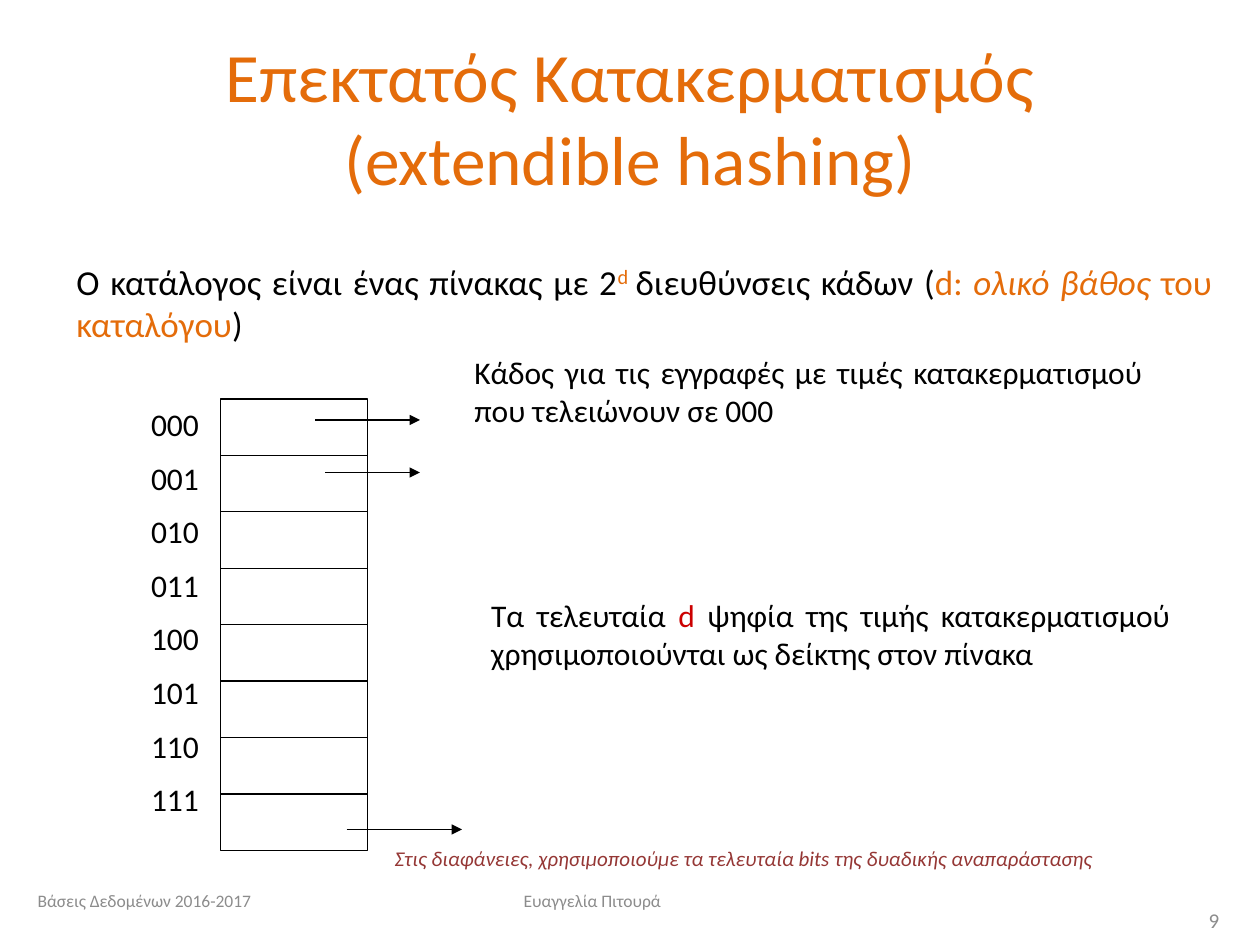
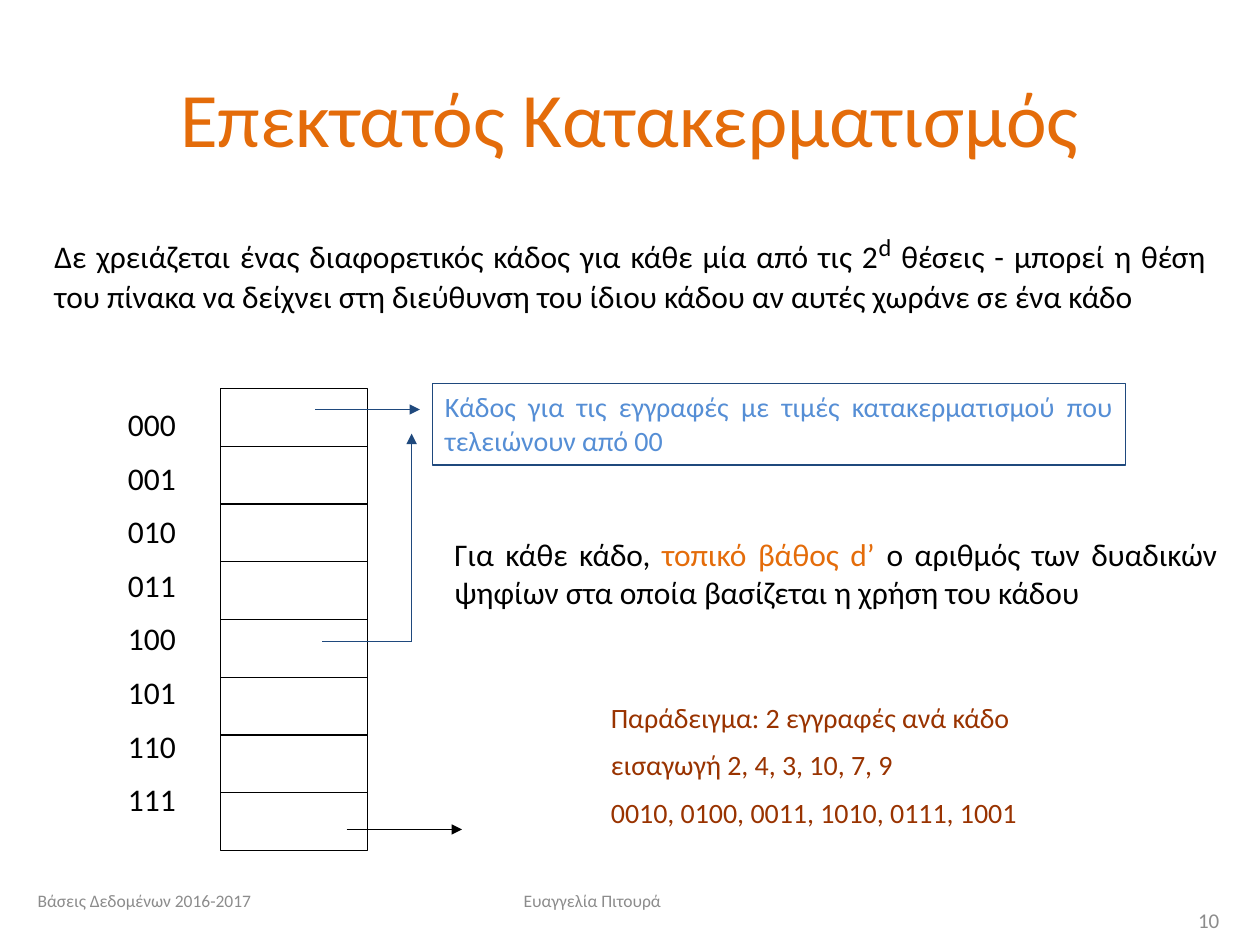
from dataclasses import dataclass
from typing import NamedTuple, Optional

from lxml.etree import SubElement
from pptx import Presentation
from pptx.dml.color import RGBColor
from pptx.enum.shapes import MSO_CONNECTOR, MSO_SHAPE
from pptx.enum.text import MSO_ANCHOR, PP_ALIGN
from pptx.oxml.ns import qn
from pptx.util import Inches, Pt

# Shared look
FONT = "Calibri"
BLACK = RGBColor(0x00, 0x00, 0x00)
WHITE = RGBColor(0xFF, 0xFF, 0xFF)
ORANGE = RGBColor(0xE4, 0x6C, 0x0A)
RED = RGBColor(0xCC, 0x00, 0x00)
MAROON = RGBColor(0x95, 0x37, 0x35)
RUST = RGBColor(0x99, 0x33, 0x00)
NAVY = RGBColor(0x1F, 0x49, 0x7D)
SKY = RGBColor(0x55, 0x8E, 0xD5)
GREY = RGBColor(0x8C, 0x8C, 0x8C)
LINE_WIDTH = Pt(0.75)

# The slide is a grid of 120 columns by 90 rows
SLIDE_WIDTH, SLIDE_HEIGHT = Inches(10), Inches(7.5)
COLUMN, ROW = SLIDE_WIDTH / 120, SLIDE_HEIGHT / 90

DEPTH = 3
ADDRESSES = [f"{address:0{DEPTH}b}" for address in range(2 ** DEPTH)]


class Area(NamedTuple):
    column: float
    row: float
    columns: float
    rows: float

    def emu(self) -> tuple[int, int, int, int]:
        return (round(self.column * COLUMN), round(self.row * ROW),
                round(self.columns * COLUMN), round(self.rows * ROW))


class Point(NamedTuple):
    column: float
    row: float


class Span(NamedTuple):
    text: str
    color: Optional[RGBColor] = None
    italic: bool = False
    raised: bool = False
    size: Optional[float] = None


@dataclass
class Passage:
    area: Area
    paragraphs: list[list[Span]]
    size: float = 18
    color: RGBColor = BLACK
    align: PP_ALIGN = PP_ALIGN.JUSTIFY
    anchor: MSO_ANCHOR = MSO_ANCHOR.TOP
    italic: bool = False
    spaced: bool = True
    border: Optional[RGBColor] = None


@dataclass
class Pointer:
    start: Point
    end: Point
    color: RGBColor = BLACK
    arrow: bool = True


@dataclass
class HashingSlide:
    title: str
    title_size: float
    number: int
    labels_column: float
    directory: Area
    passages: list[Passage]
    pointers: list[Pointer]


FOOTERS = [
    Passage(Area(2.4, 83.4, 28, 4.8), [[Span("Βάσεις Δεδομένων 2016-2017")]], 10, GREY,
            PP_ALIGN.LEFT, MSO_ANCHOR.MIDDLE, spaced=False),
    Passage(Area(37.4, 83.4, 38, 4.8), [[Span("Ευαγγελία Πιτουρά")]], 10, GREY,
            PP_ALIGN.CENTER, MSO_ANCHOR.MIDDLE, spaced=False),
]
LAST_POINTER = Pointer(Point(33, 79), Point(44, 79))

SLIDES = [
    HashingSlide(
        "Επεκτατός Κατακερματισμός (extendible hashing)", 39.6, 9, 13.2,
        Area(21, 38, 14, 43),
        [
            Passage(Area(6.1, 24.2, 110.5, 9.2), [[
                Span("Ο κατάλογος είναι ένας πίνακας με 2"),
                Span("d ", ORANGE, raised=True),
                Span("διευθύνσεις κάδων ("),
                Span("d: ", ORANGE),
                Span("ολικό βάθος", ORANGE, italic=True),
                Span(" του καταλόγου", ORANGE),
                Span(")")]], 20),
            Passage(Area(44, 33, 66, 9.2), [[
                Span("Κάδος για τις εγγραφές με τιμές κατακερματισμού "
                     "που τελειώνουν σε 000")]]),
            Passage(Area(45.6, 56.2, 67, 13.2), [[
                Span("Τα τελευταία "),
                Span("d ", RED),
                Span("ψηφία της τιμής κατακερματισμού χρησιμοποιούνται "
                     "ως δείκτης στον πίνακα")]]),
            Passage(Area(36.4, 79.9, 79.8, 3.6), [[
                Span("Στις διαφάνειες, χρησιμοποιούμε τα τελευταία bits "
                     "της δυαδικής αναπαράστασης")]],
                    12, MAROON, italic=True, spaced=False),
        ],
        [Pointer(Point(30, 40), Point(40, 40)),
         Pointer(Point(31, 45), Point(40, 45)),
         LAST_POINTER]),
    HashingSlide(
        "Επεκτατός Κατακερματισμός", 44, 10, 11,
        Area(21, 37, 14, 44),
        [
            Passage(Area(41.2, 36.5, 66, 7.8), [[
                Span("Κάδος για τις εγγραφές με τιμές κατακερματισμού "
                     "που τελειώνουν από 00")]], 16, SKY, border=NAVY),
            Passage(Area(4, 21, 112, 13.2), [[
                Span("Δε χρειάζεται ένας διαφορετικός κάδος για κάθε μία από τις 2"),
                Span("d", raised=True, size=24),
                Span(" θέσεις - μπορεί η θέση του πίνακα να δείχνει στη διεύθυνση "
                     "του ίδιου κάδου αν αυτές χωράνε σε ένα κάδο")]]),
            Passage(Area(42.1, 50.4, 75, 8.5), [[
                Span("Για κάθε κάδο, "),
                Span("τοπικό βάθος d’ ", ORANGE),
                Span("o αριθμός των δυαδικών ψηφίων στα οποία βασίζεται "
                     "η χρήση του κάδου")]]),
            Passage(Area(57, 66.1, 58.5, 14.2), [
                [Span("Παράδειγμα: 2 εγγραφές ανά κάδο")],
                [Span("εισαγωγή 2, 4, 3, 10, 7, 9")],
                [Span("0010, 0100, 0011, 1010, 0111, 1001")]],
                    16, RUST, PP_ALIGN.LEFT),
        ],
        [Pointer(Point(30, 39), Point(40, 39), NAVY),
         Pointer(Point(30.7, 61.1), Point(39.2, 61.1), NAVY, arrow=False),
         Pointer(Point(39.2, 61.1), Point(39.2, 41.3), NAVY),
         LAST_POINTER]),
]


def set_font(font, size: float, color: RGBColor, italic: bool = False) -> None:
    font.name, font.size, font.italic = FONT, Pt(size), italic
    font.color.rgb = color


def add_half_line_before(paragraph) -> None:
    properties = paragraph._p.get_or_add_pPr()
    SubElement(SubElement(properties, qn("a:spcBef")), qn("a:spcPct")).set("val", "50000")


def draw_rectangle(slide, area: Area, border: RGBColor):
    rectangle = slide.shapes.add_shape(MSO_SHAPE.RECTANGLE, *area.emu())
    rectangle.shadow.inherit = False
    rectangle.line.color.rgb = border
    rectangle.line.width = LINE_WIDTH
    return rectangle


def draw_passage(slide, passage: Passage) -> None:
    if passage.border is None:
        holder = slide.shapes.add_textbox(*passage.area.emu())
    else:
        holder = draw_rectangle(slide, passage.area, passage.border)
        holder.fill.background()
    frame = holder.text_frame
    frame.word_wrap = True
    frame.vertical_anchor = passage.anchor
    for index, spans in enumerate(passage.paragraphs):
        paragraph = frame.add_paragraph() if index else frame.paragraphs[0]
        paragraph.alignment = passage.align
        if passage.spaced:
            add_half_line_before(paragraph)
        set_font(paragraph.font, passage.size, passage.color, passage.italic)
        for span in spans:
            run = paragraph.add_run()
            run.text = span.text
            # The paragraph's colour is repeated because a shape's style sets its own
            run.font.color.rgb = span.color or passage.color
            if span.italic:
                run.font.italic = True
            if span.size:
                run.font.size = Pt(span.size)
            if span.raised:
                run.font._element.set("baseline", "30000")


def draw_pointer(slide, pointer: Pointer):
    (left, top), (right, bottom) = pointer.start, pointer.end
    connector = slide.shapes.add_connector(
        MSO_CONNECTOR.STRAIGHT, round(left * COLUMN), round(top * ROW),
        round(right * COLUMN), round(bottom * ROW))
    connector.line.color.rgb = pointer.color
    connector.line.width = LINE_WIDTH
    if pointer.arrow:
        SubElement(connector.line._get_or_add_ln(), qn("a:tailEnd")).set("type", "triangle")
    SubElement(connector._element.spPr, qn("a:effectLst"))
    return connector


def draw_directory(slide, area: Area, labels_column: float) -> None:
    # Addresses beside the directory
    draw_passage(slide, Passage(Area(labels_column, 38, 92, 42.7),
                                [[Span(address)] for address in ADDRESSES],
                                align=PP_ALIGN.LEFT))
    # One equal cell for each address
    directory = draw_rectangle(slide, area, BLACK)
    directory.fill.solid()
    directory.fill.fore_color.rgb = WHITE
    cells = len(ADDRESSES)
    for cell in range(1, cells):
        row = area.row + cell * area.rows / cells
        divider = draw_pointer(slide, Pointer(
            Point(area.column, row), Point(area.column + area.columns, row), arrow=False))
        if cell * 2 == cells:
            divider.begin_connect(directory, 1)
            divider.end_connect(directory, 3)


def draw_title(slide, text: str, size: float) -> None:
    title = slide.shapes.title
    title.left, title.top, title.width, title.height = Area(6, 3.6, 108, 15).emu()
    title.text_frame.text = text
    title.text_frame.vertical_anchor = MSO_ANCHOR.MIDDLE
    paragraph = title.text_frame.paragraphs[0]
    paragraph.alignment = PP_ALIGN.CENTER
    set_font(paragraph.font, size, ORANGE)


def draw_slide(presentation, content: HashingSlide) -> None:
    slide = presentation.slides.add_slide(presentation.slide_layouts[5])
    draw_title(slide, content.title, content.title_size)
    draw_directory(slide, content.directory, content.labels_column)
    for pointer in content.pointers:
        draw_pointer(slide, pointer)
    page_number = Passage(Area(89.3, 85.2, 28, 4.8), [[Span(str(content.number))]], 12, GREY,
                          PP_ALIGN.RIGHT, MSO_ANCHOR.MIDDLE, spaced=False)
    for passage in [*content.passages, *FOOTERS, page_number]:
        draw_passage(slide, passage)


def main() -> None:
    presentation = Presentation()
    presentation.slide_width, presentation.slide_height = SLIDE_WIDTH, SLIDE_HEIGHT
    for content in SLIDES:
        draw_slide(presentation, content)
    presentation.save("out.pptx")


if __name__ == "__main__":
    main()
